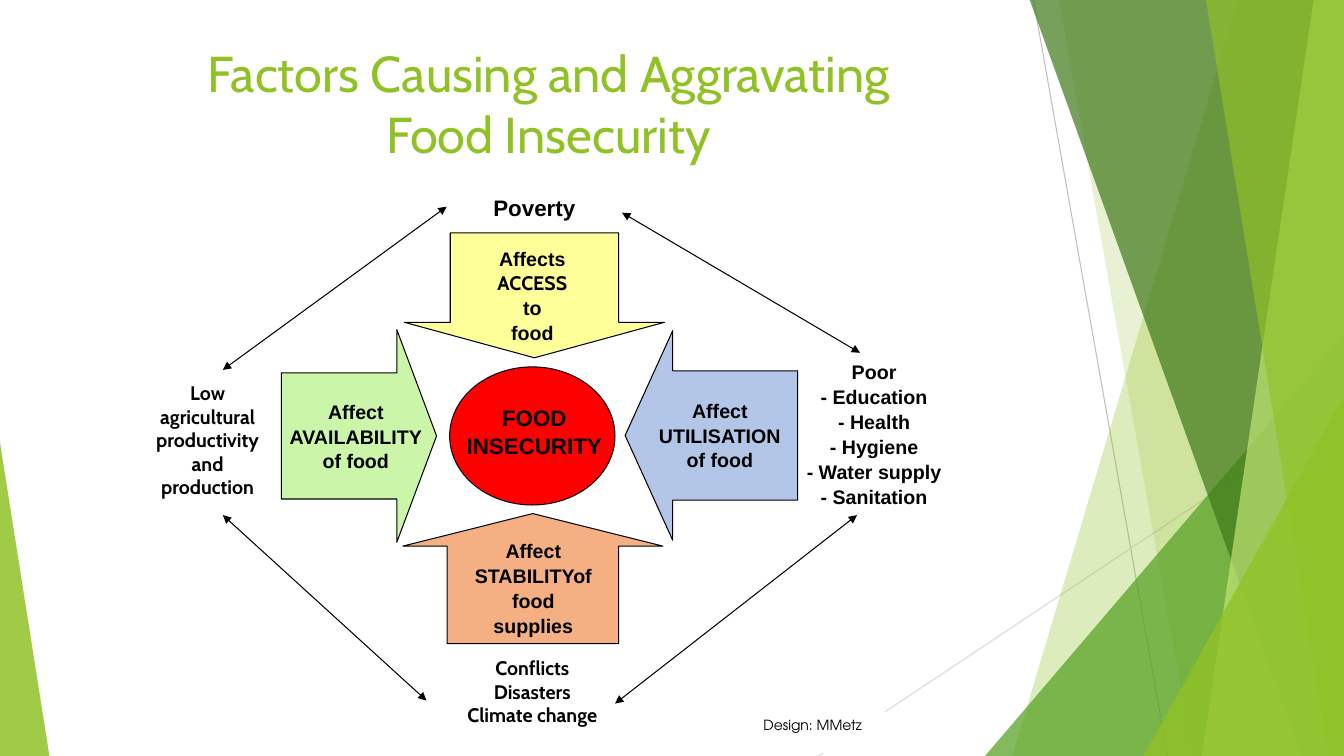
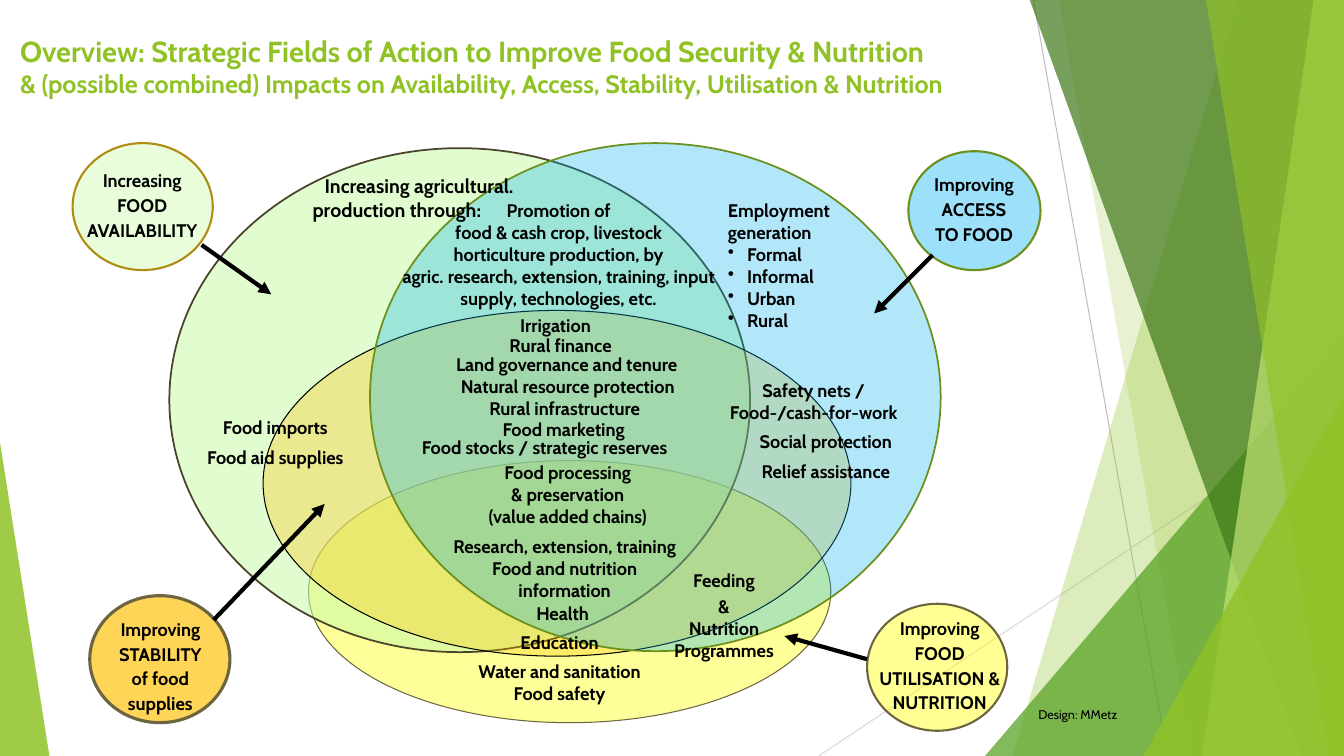
"""Build two slides on the causes of food insecurity and the fields of action."""
from lxml.etree import SubElement
from pptx import Presentation
from pptx.dml.color import RGBColor
from pptx.enum.shapes import MSO_CONNECTOR, MSO_SHAPE
from pptx.enum.text import MSO_ANCHOR, MSO_AUTO_SIZE, PP_ALIGN
from pptx.oxml.ns import qn
from pptx.util import Inches, Pt

HUES = {
    "lime": "90C226", "leaf": "54A021", "moss": "3F7819", "pale": "C0E474",
    "gray": "BFBFBF", "mist": "D9D9D9", "black": "000000", "white": "FFFFFF",
    "peach": "F4B083", "lemon": "FFFF99", "mint": "CBF6AA", "red": "FF0000",
    "steel": "B4C6E7", "spring": "C9FBA7", "gold": "FFC000", "sun": "FFFF00",
    "sky": "00B0F0", "olive": "6D6540", "bark": "48432A", "fern": "6B901C",
    "ochre": "AF8C14",
}
ARIAL = {"name": "Arial", "size": Pt(14), "bold": True, "line_spacing": 1.06}
BIG = {**ARIAL, "size": Pt(16)}
CABIN = {"name": "Cabin", "size": Pt(14), "bold": True}
SMALL = {**CABIN, "size": Pt(13)}
LOOSE = {**SMALL, "line_spacing": 1.14}
LEFT = {"alignment": PP_ALIGN.LEFT}
GAP = {"space_before": Pt(6)}
FONT = ("name", "size", "bold")

RAYS = [("gray", 10.25, 0, 11.58, 7.5), ("mist", 13.33, 4.03, 8.12, 7.5)]
BANDS = [
    ("lime", 30, 12.28, 10.04), ("lime", 20, 10.5, 11.83),
    ("leaf", 72, (9.77, 3.33, 3.56, 4.17), 1),
    ("moss", 70, 10.21, 12.91), ("pale", 70, 13.03, 11.92),
    ("lime", 65, 11.96, 13.18),
    ("lime", 80, (11.34, 3.93, 1.99, 3.57), 1),
    ("lime", 85, (0, 4.39, 0.49, 3.11), 0),
]

CAUSES = {
    "title": (["Factors Causing and Aggravating", "Food Insecurity"],
              (0.74, 0.37, 9.4, 1.44),
              {"name": "Cabin", "size": Pt(36), "alignment": PP_ALIGN.CENTER}),
    "blocks": [
        ((4.64, 4.45, 1.29, 2.58), "peach", 270, (0.659, 0.25)),
        ((4.68, 1.64, 1.24, 2.58), "lemon", 90, (0.647, 0.284)),
        ((2.79, 3.27, 1.54, 2.11), "mint", 0, (0.593, 0.256)),
        ((6.2, 3.28, 1.71, 2.08), "steel", 180, (0.617, 0.276)),
    ],
    "links": [
        (6.17, 2.11, 8.53, 3.5), (6.1, 6.98, 8.5, 5.11),
        (2.21, 5.11, 4.23, 6.95), (2.21, 3.67, 4.43, 2.05),
    ],
    "labels": [
        (5.3, 1.91, ["Poverty"], BIG),
        (5.3, 3.99, ["FOOD", "INSECURITY"], BIG),
        (5.28, 6.51, ["Conflicts", "Disasters", "Climate change"], CABIN),
        (5.28, 2.44, ["Affects", ("ACCESS", {"name": "Cabin", "line_spacing": 1.0}),
                      "to", "food"], ARIAL),
        (5.29, 5.33, ["Affect", "STABILITYof", "food", "supplies"], ARIAL),
        (8.67, 3.56, ["Poor", "- Education", "- Health", "- Hygiene",
                      "- Water supply", "- Sanitation"], ARIAL),
        (7.14, 3.94, ["Affect", "UTILISATION", "of food"], ARIAL),
        (3.53, 3.95, ["Affect", "AVAILABILITY", "of food"], ARIAL),
        (2.06, 3.78, ["Low", "agricultural", "productivity", "and",
                      "production"], CABIN),
        (8.06, 7.11, ["Design: MMetz"],
         {"name": "TeX Gyre Adventor", "size": Pt(10)}),
    ],
}

FIELDS = {
    "title": (["Overview: Strategic Fields of Action to Improve Food Security & Nutrition",
               ("& (possible combined) Impacts on Availability, Access, Stability, "
                "Utilisation & Nutrition", {"size": Pt(18)})],
              (0.1, 0.28, 11.09, 0.78),
              {"name": "Cabin", "size": Pt(20.7), "bold": True, **LEFT}),
    "ovals": [
        ((3.06, 4.57, 5.18, 2.6), "lemon", 100, "olive", 0.75),
        ((1.68, 1.47, 5.76, 5), "spring", 55, "bark", 1.25),
        ((2.61, 3.08, 5.83, 3.43), "gold", 30, "black", 0.75),
        ((3.67, 1.42, 5.66, 5.04), "sky", 30, "fern", 1.25),
        ((8.6, 5.99, 1.39, 1.26), "sun", 42, "olive", 1.5),
        ((9.01, 1.5, 1.31, 1.18), "sky", 39, "fern", 1.5),
        ((0.72, 1.42, 1.39, 1.26), "spring", 40, "ochre", 1.5),
        ((0.89, 5.91, 1.39, 1.26), "gold", 66, "olive", 2.25),
    ],
    "links": [
        (2.12, 6.15, 3.22, 5), (8.6, 6.54, 7.78, 6.31),
        (9.25, 2.53, 8.67, 3.11), (2, 2.43, 2.69, 2.92),
    ],
    "labels": [
        (1.41, 1.65, ["Increasing", "FOOD", "AVAILABILITY"], LOOSE),
        (1.59, 6.1, ["Improving", "STABILITY", "of food", "supplies"], LOOSE),
        (9.32, 6.09, ["Improving", "FOOD", "UTILISATION &", "NUTRITION"], LOOSE),
        (9.66, 1.69, ["Improving", "ACCESS", "TO FOOD"], LOOSE),
        (5.54, 1.98, ["Promotion of", "food & cash crop, livestock",
                      "horticulture production, by",
                      "agric. research, extension, training, input",
                      "supply, technologies, etc."], SMALL),
        (5.51, 3.12, ["Irrigation"], SMALL),
        (5.56, 3.32, ["Rural finance"], SMALL),
        (5.62, 3.5, ["Land governance and tenure"], SMALL),
        (5.63, 3.72, ["Natural resource protection"], SMALL),
        (5.6, 3.94, ["Rural infrastructure"], SMALL),
        (5.59, 4.15, ["Food marketing"], SMALL),
        (5.4, 4.33, ["Food stocks / strategic reserves"], SMALL),
        (5.63, 4.58, ["Food processing", "& preservation",
                      "(value added chains)"], SMALL),
        (5.6, 5.31, ["Research, extension, training", "Food and nutrition",
                     "information"], SMALL),
        (5.58, 5.98, ["Health"], SMALL),
        (5.55, 6.26, ["Education"], SMALL),
        (5.55, 6.55, ["Water and sanitation", "Food safety"], SMALL),
        (7.18, 5.65, ["Feeding", ("&", {"space_before": Pt(3)}),
                      "Nutrition", "Programmes"], SMALL),
        (2.73, 4.13, ["Food imports", ("Food aid supplies", GAP)], SMALL),
        (8.07, 3.76, ["Safety nets /", "Food-/cash-for-work"], SMALL),
        (8.19, 4.27, ["Social protection", ("Relief assistance", GAP)], SMALL),
        (8.87, 1.98, ["Employment", "generation"]
         + [(kind, {"bullet": "•"}) for kind in
            ("Formal", "Informal", "Urban", "Rural")], {**SMALL, **LEFT}),
        (4.75, 1.73, [("Increasing agricultural.", {"indent": 0.12}),
                      "production through:"], {**CABIN, **LEFT}),
        (10.69, 7.01, ["Design: MMetz"], {"name": "Cabin", "size": Pt(9)}),
    ],
}


def color(hue):
    return RGBColor.from_string(HUES[hue])


def paint(shape, hue, alpha=100, edge=None, width=0.75):
    shape.shadow.inherit = False
    shape.fill.solid()
    shape.fill.fore_color.rgb = color(hue)
    if alpha < 100:
        tone = shape.element.spPr.find(qn("a:solidFill"))[0]
        SubElement(tone, qn("a:alpha"), val=str(alpha * 1000))
    if edge:
        shape.line.color.rgb = color(edge)
        shape.line.width = Pt(width)
    else:
        shape.line.fill.background()


def draw(slide, kind, box, *look, adj=()):
    shape = slide.shapes.add_shape(kind, *map(Inches, box))
    for spot, ratio in enumerate(adj):
        shape.adjustments[spot] = ratio
    paint(shape, *look)
    return shape


def link(slide, ends, hue="black", width=0.75, heads=()):
    wire = slide.shapes.add_connector(MSO_CONNECTOR.STRAIGHT, *map(Inches, ends))
    wire.line.color.rgb = color(hue)
    wire.line.width = Pt(width)
    edge = wire.line._get_or_add_ln()
    for head in heads:
        SubElement(edge, qn(head), type="triangle")
    SubElement(wire.element.spPr, qn("a:effectLst"))
    return wire


def write(frame, lines, base, hue="black"):
    for rank, line in enumerate(lines):
        text, extra = (line, {}) if isinstance(line, str) else line
        look = {**base, **extra}
        para = frame.add_paragraph() if rank else frame.paragraphs[0]
        run = para.add_run()
        run.text = text
        run.font.color.rgb = color(hue)
        mark, indent = look.pop("bullet", None), look.pop("indent", 0)
        for key, value in look.items():
            setattr(run.font if key in FONT else para, key, value)
        props = para._p.get_or_add_pPr()
        if mark:
            props.set("marL", str(Inches(0.19)))
            props.set("indent", str(-Inches(0.19)))
            SubElement(props, qn("a:buChar"), char=mark)
        elif indent:
            props.set("marL", str(Inches(indent)))


def label(slide, mid, top, lines, look, width=3.3):
    tall = look["size"] * 1.25 * len(lines)
    box = slide.shapes.add_textbox(Inches(mid - width / 2), Inches(top),
                                   Inches(width), int(tall))
    frame = box.text_frame
    frame.word_wrap = True
    for side in ("left", "top", "right", "bottom"):
        setattr(frame, f"margin_{side}", 0)
    write(frame, lines, {"alignment": PP_ALIGN.CENTER, **look})


def facets(slide, layout):
    parts = [link(slide, ends, hue) for hue, *ends in RAYS]
    for hue, alpha, spot, foot in BANDS:
        if isinstance(spot, tuple):
            shape = draw(slide, MSO_SHAPE.ISOSCELES_TRIANGLE, spot, hue, alpha,
                         adj=[foot])
        else:
            pen = slide.shapes.build_freeform(Inches(spot), Inches(-0.01))
            pen.add_line_segments([(Inches(x), Inches(y)) for x, y in
                                   ((13.33, -0.01), (13.33, 7.5), (foot, 7.5))])
            shape = pen.convert_to_shape()
            paint(shape, hue, alpha)
        parts.append(shape)
    for part in parts:
        layout.shapes.element.append(part.element)


def start(deck, layout, page):
    slide = deck.slides.add_slide(layout)
    lines, box, look = page["title"]
    head = slide.shapes.title
    for key, size in zip(("left", "top", "width", "height"), box):
        setattr(head, key, Inches(size))
    frame = head.text_frame
    frame.auto_size = MSO_AUTO_SIZE.NONE
    frame.vertical_anchor = MSO_ANCHOR.TOP
    write(frame, lines, look, "lime")
    return slide


def main():
    deck = Presentation()
    deck.slide_width, deck.slide_height = Inches(13.33), Inches(7.5)
    layout = deck.slide_layouts[5]

    slide = start(deck, layout, CAUSES)
    facets(slide, layout)
    for box, hue, turn, adj in CAUSES["blocks"]:
        block = draw(slide, MSO_SHAPE.RIGHT_ARROW, box, hue, 100, "black", adj=adj)
        block.rotation = turn
    draw(slide, MSO_SHAPE.OVAL, (4.46, 3.64, 1.64, 1.37), "red", 100, "black")
    draw(slide, MSO_SHAPE.RECTANGLE, (7.47, 7.06, 1.48, 0.41), "white")
    for ends in CAUSES["links"]:
        link(slide, ends, heads=("a:headEnd", "a:tailEnd"))
    for item in CAUSES["labels"]:
        label(slide, *item)

    slide = start(deck, layout, FIELDS)
    for box, *look in FIELDS["ovals"]:
        draw(slide, MSO_SHAPE.OVAL, box, *look)
    for ends in FIELDS["links"]:
        link(slide, ends, width=3, heads=("a:tailEnd",))
    for item in FIELDS["labels"]:
        label(slide, *item)

    deck.save("out.pptx")


if __name__ == "__main__":
    main()
